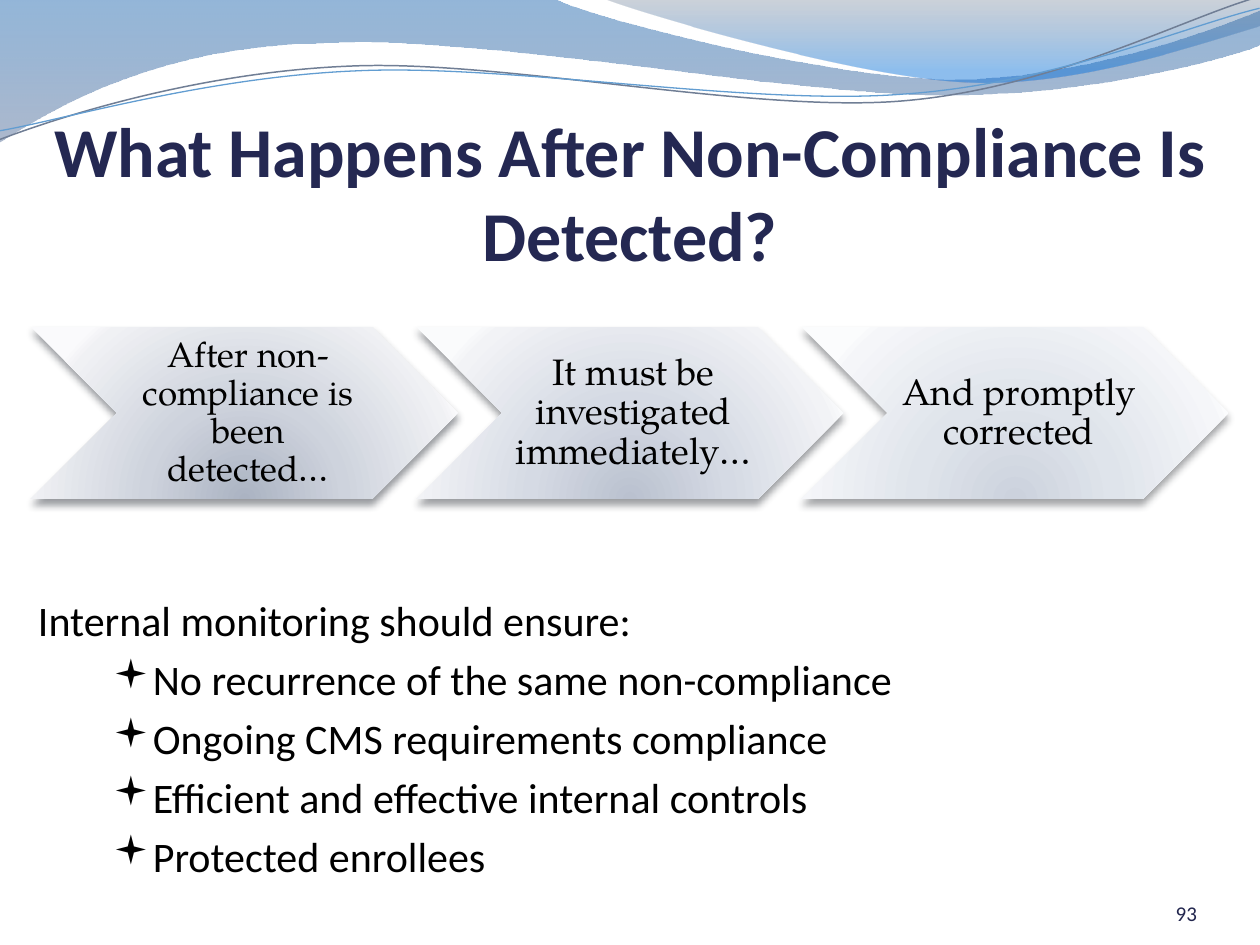
from itertools import chain
from lxml.etree import SubElement
from pptx import Presentation
from pptx.dml.color import RGBColor
from pptx.enum.shapes import MSO_SHAPE as Preset
from pptx.enum.text import MSO_ANCHOR as Anchor, MSO_AUTO_SIZE as AutoSize, PP_ALIGN as Align
from pptx.oxml.ns import qn
from pptx.util import Pt

EMU_PER_PX = 914400 / 126
COLORS = {
    "navy": "242852", "number": "22264E", "black": "000000",
    "wave_blue": "125EAA", "wave_gray": "697FA4",
    "crest_gray": "596982", "crest_blue": "0670DA",
    "line_gray": "707E95", "line_blue": "629DD1",
}
BODY_FONT = "Calibri"
STEP_FONT = "TeX Gyre Pagella"
LINE_TILT = 357.3

WAVE = [(0, 0), (554, -1), (600, 21, 837, 79, 955, 79), (1074, 79, 1207, 33, 1260, 11),
        (1261, 45), (1238, 55, 1096, 96, 940, 95), (784, 94, 481, 35, 324, 43),
        (163, 45, 58, 105, -1, 142), (0, 0)]
CREST = [(604, -1), (641, 14, 859, 78, 969, 82), (1079, 87, 1211, 40, 1260, 26),
         (1260, 0), (604, -1)]
GRAY_LINE = [(-3, 110), (58, 90, 199, 52, 350, 53), (499, 53, 745, 118, 896, 114),
             (1048, 110, 1184, 45, 1260, 27)]
BLUE_LINE = [(-2, 101), (57, 94, 207, 57, 357, 58), (509, 58, 750, 112, 902, 107),
             (1052, 104, 1188, 52, 1262, 38)]

STEPS = [
    ("After non-compliance is been detected…", 20, "282D36",
     [(0, "ABB3C2"), (43, "CED3DD"), (93, "F0F1F4"), (100, "FAFAFC")]),
    ("It must be investigated immediately…", 21, "33373E",
     [(0, "BAC1CF"), (43, "D5DAE4"), (93, "F2F3F6"), (100, "FAFBFC")]),
    ("And promptly corrected", 21, "3F4247",
     [(0, "CCD2DD"), (43, "DFE4EB"), (93, "F5F6F9"), (100, "FBFCFD")]),
]
LEAD = "Internal monitoring should ensure:"
CHECKS = [
    "No recurrence of the same non-compliance",
    "Ongoing CMS requirements compliance",
    "Efficient and effective internal controls",
    "Protected enrollees",
]


def px(value):
    return round(value * EMU_PER_PX)


def add_element(parent, tag, **attributes):
    return SubElement(parent, qn(tag), {name: str(value) for name, value in attributes.items()})


def add_color(parent, color, opacity=100):
    element = add_element(parent, "a:srgbClr", val=color)
    if opacity < 100:
        add_element(element, "a:alpha", val=opacity * 1000)


def fill_gradient(shape, stops, radial=False):
    shape.fill.background()
    properties = shape._element.spPr
    empty_fill = properties.find(qn("a:noFill"))
    gradient = add_element(properties, "a:gradFill", rotWithShape=1)
    properties.replace(empty_fill, gradient)
    stop_list = add_element(gradient, "a:gsLst")
    for position, *color in stops:
        add_color(add_element(stop_list, "a:gs", pos=position * 1000), *color)
    if radial:
        circle = add_element(gradient, "a:path", path="circle")
        add_element(circle, "a:fillToRect", l=50000, t=130000, r=50000, b=-30000)
    else:
        add_element(gradient, "a:lin", ang=5400000, scaled=1)


def add_shadow(shape, color):
    effects = shape._element.spPr.find(qn("a:effectLst"))
    shadow = add_element(effects, "a:outerShdw", blurRad=Pt(4.5), dist=Pt(3),
                         dir=5400000, rotWithShape=0)
    add_color(shadow, color, 48)


def write(para, text, font, size, color, bold=False):
    span = para.add_run()
    span.text = text
    span.font.name = font
    span.font.size = Pt(size)
    span.font.bold = bold
    span.font.color.rgb = RGBColor.from_string(COLORS[color])


def set_frame(frame, anchor, insets):
    frame.word_wrap = True
    frame.auto_size = AutoSize.NONE
    frame.vertical_anchor = anchor
    frame.margin_left, frame.margin_top, frame.margin_right, frame.margin_bottom = map(px, insets)


def place(shape, box):
    shape.left, shape.top, shape.width, shape.height = map(px, box)


def bend(shape, segments):
    lines = iter(list(shape._element.iter(qn("a:lnTo"))))
    for segment in segments[1:]:
        line = next(lines)
        if len(segment) == 6:
            curve = add_element(line.getparent(), "a:cubicBezTo")
            line.addprevious(curve)
            for part in (line, next(lines), next(lines)):
                curve.append(part[0])
                part.getparent().remove(part)


def add_outline(page, origin, segments, close):
    left, top = origin
    values = list(chain.from_iterable(segments))
    points = [(px(left + x), px(top + y)) for x, y in zip(values[::2], values[1::2])]
    builder = page.shapes.build_freeform(*points[0], scale=1.0)
    builder.add_line_segments(points[1:], close=close)
    shape = builder.convert_to_shape()
    bend(shape, segments)
    shape.shadow.inherit = False
    return shape


def add_header(page, origin):
    for segments, stops in (
        (WAVE, [(0, COLORS["wave_blue"], 45), (100, COLORS["wave_gray"], 55)]),
        (CREST, [(0, COLORS["crest_gray"], 30), (80, COLORS["crest_blue"], 45)]),
    ):
        shape = add_outline(page, origin, segments, True)
        fill_gradient(shape, stops)
        shape.line.fill.background()
    for segments, color, width in ((GRAY_LINE, "line_gray", 0.85), (BLUE_LINE, "line_blue", 0.75)):
        shape = add_outline(page, origin, segments, False)
        shape.rotation = LINE_TILT
        shape.fill.background()
        shape.line.color.rgb = RGBColor.from_string(COLORS[color])
        shape.line.width = Pt(width)


def add_title(page, box):
    title = page.shapes.title
    place(title, box)
    set_frame(title.text_frame, Anchor.BOTTOM, (0, 6, 0, 0))
    para = title.text_frame.paragraphs[0]
    para.alignment = Align.CENTER
    para.space_after = Pt(12)
    write(para, "What Happens After Non-Compliance Is Detected?", BODY_FONT, 40, "navy", True)


def add_steps(page, box):
    left, top, width, height = box
    overlap = 42
    step_width = (width + overlap * (len(STEPS) - 1)) / len(STEPS)
    for index, (text, size, shadow, stops) in enumerate(STEPS):
        chevron = page.shapes.add_shape(
            Preset.CHEVRON, px(left + index * (step_width - overlap)), px(top),
            px(step_width), px(height))
        chevron.shadow.inherit = False
        fill_gradient(chevron, stops, radial=True)
        chevron.line.fill.background()
        add_shadow(chevron, shadow)
        set_frame(chevron.text_frame, Anchor.MIDDLE, (11, 4, 4, 4))
        para = chevron.text_frame.paragraphs[0]
        para.alignment = Align.CENTER
        para.line_spacing = 0.9
        write(para, text, STEP_FONT, size, "black")


def add_bullet(para):
    properties = para._p.get_or_add_pPr()
    properties.set("marL", str(px(113)))
    properties.set("indent", str(px(-38)))
    add_color(add_element(properties, "a:buClr"), COLORS["black"])
    add_element(properties, "a:buSzPct", val=95000)
    add_element(properties, "a:buFont", typeface="Wingdings", charset=2)
    add_element(properties, "a:buChar", char="▪")


def add_checks(page, box):
    frame = page.shapes.add_textbox(*map(px, box)).text_frame
    set_frame(frame, Anchor.TOP, (12, 6, 13, 6))
    for index, text in enumerate([LEAD, *CHECKS]):
        para = frame.add_paragraph() if index else frame.paragraphs[0]
        para.space_before = Pt(4.8)
        if index:
            add_bullet(para)
        write(para, text, BODY_FONT, 24, "black")


def add_page_number(page, box):
    frame = page.shapes.add_textbox(*map(px, box)).text_frame
    set_frame(frame, Anchor.BOTTOM, (0, 0, 0, 0))
    para = frame.paragraphs[0]
    para.alignment = Align.RIGHT
    write(para, "93", BODY_FONT, 12, "number")


def main():
    deck = Presentation()
    deck.slide_width, deck.slide_height = px(1260), px(945)
    page = deck.slides.add_slide(deck.slide_layouts[5])
    add_header(page, (0, 0))
    add_title(page, (0, 84, 1260, 192))
    add_checks(page, (26, 589, 1213, 315))
    add_page_number(page, (1092, 876, 105, 50))
    add_steps(page, (31, 327, 1198, 172))
    deck.save("out.pptx")


if __name__ == "__main__":
    main()
